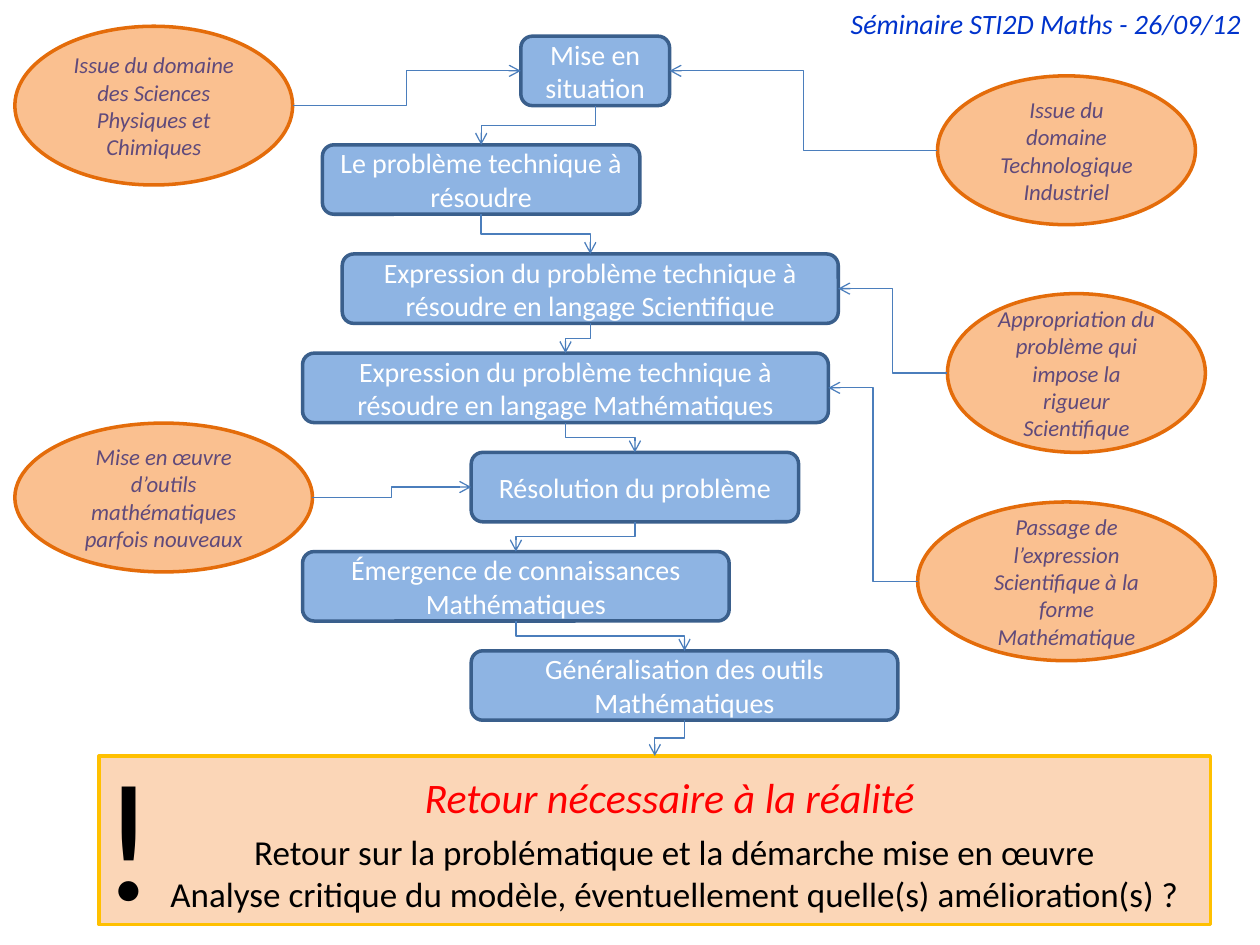
from lxml.etree import SubElement
from pptx import Presentation
from pptx.dml.color import RGBColor
from pptx.enum.shapes import MSO_CONNECTOR, MSO_SHAPE
from pptx.enum.text import MSO_ANCHOR, PP_ALIGN
from pptx.oxml.ns import qn
from pptx.util import Cm, Pt

WHITE = RGBColor(0xFF, 0xFF, 0xFF)
BLACK = RGBColor(0x00, 0x00, 0x00)
RED = RGBColor(0xFF, 0x00, 0x00)
HEADER_BLUE = RGBColor(0x00, 0x33, 0xCC)
STEP_FILL = RGBColor(0x8E, 0xB4, 0xE3)
STEP_LINE = RGBColor(0x3A, 0x5F, 0x8C)
NOTE_FILL = RGBColor(0xFA, 0xC0, 0x90)
NOTE_LINE = RGBColor(0xE4, 0x6C, 0x0A)
NOTE_TEXT = RGBColor(0x60, 0x4A, 0x7B)
FRAME_FILL = RGBColor(0xF7, 0x96, 0x46)
FRAME_LINE = RGBColor(0xFF, 0xC0, 0x00)
ARROW_BLUE = RGBColor(0x4B, 0x7E, 0xBC)

deck = Presentation()
deck.slide_width, deck.slide_height = Cm(25.4), Cm(19.05)
page = deck.slides.add_slide(deck.slide_layouts[6])


def write(box, text, size, color, italic=False, align=PP_ALIGN.CENTER):
    box.text_frame.word_wrap = True
    box.text_frame.text = text
    for para in box.text_frame.paragraphs:
        para.alignment = align
        for span in para.runs:
            span.font.name = "Calibri"
            span.font.size = Pt(size)
            span.font.italic = italic
            span.font.color.rgb = color


def add_box(kind, bounds, fill, line):
    box = page.shapes.add_shape(kind, *[Cm(value) for value in bounds])
    box.shadow.inherit = False
    box.fill.solid()
    box.fill.fore_color.rgb = fill
    box.line.color.rgb = line
    box.line.width = Pt(2)
    box.text_frame.vertical_anchor = MSO_ANCHOR.MIDDLE
    return box


# Header
header = page.shapes.add_textbox(Cm(16.9), Cm(0), Cm(8.5), Cm(0.94))
write(header, "Séminaire STI2D Maths - 26/09/12", 16, HEADER_BLUE, True, PP_ALIGN.LEFT)

# Chain of steps: left, top, width, text
steps = []
for left, top, width, text in [
    (10.5, 0.73, 3, "Mise en situation"),
    (6.5, 2.92, 6.4, "Le problème technique à résoudre"),
    (6.9, 5.12, 10, "Expression du problème technique à résoudre en langage Scientifique"),
    (6.1, 7.12, 10.6, "Expression du problème technique à résoudre en langage Mathématiques"),
    (9.5, 9.12, 6.6, "Résolution du problème"),
    (6.1, 11.12, 8.6, "Émergence de connaissances Mathématiques"),
    (9.5, 13.12, 8.6, "Généralisation des outils Mathématiques"),
]:
    step = add_box(MSO_SHAPE.ROUNDED_RECTANGLE, (left, top, width, 1.4), STEP_FILL, STEP_LINE)
    write(step, text, 16, WHITE)
    steps.append(step)

# Closing frame
frame = add_box(MSO_SHAPE.RECTANGLE, (2, 15.24, 22.4, 3.4), FRAME_FILL, FRAME_LINE)
frame_color = frame._element.spPr.find(qn("a:solidFill"))[0]
SubElement(frame_color, qn("a:alpha")).set("val", "39000")
closing = ("Retour sur la problématique et la démarche mise en œuvre\n"
           "Analyse critique du modèle, éventuellement quelle(s) amélioration(s) ?")
for bounds, text, size, color, italic, align in [
    ((7, 15.42, 13, 1.28), "Retour nécessaire à la réalité", 24, RED, True, PP_ALIGN.CENTER),
    ((3, 16.61, 21.2, 1.96), closing, 20, BLACK, False, PP_ALIGN.CENTER),
    ((1.8, 14.65, 2, 4.37), "!", 96, BLACK, False, PP_ALIGN.LEFT),
]:
    box = page.shapes.add_textbox(*[Cm(value) for value in bounds])
    write(box, text, size, color, italic, align)

# Comments in ellipses, each with an elbow arrow to its step
arrows = []
for bounds, target, text in [
    ((0.3, 0.53, 5.6, 3.2), 0, "Issue du domaine des Sciences Physiques et Chimiques"),
    ((18.9, 1.53, 5.2, 3), 0, "Issue du domaine Technologique Industriel"),
    ((19.1, 5.92, 5.2, 3.2), 2, "Appropriation du problème qui impose la rigueur Scientifique"),
    ((18.5, 10.12, 6, 3.2), 3, "Passage de l’expression Scientifique à la forme Mathématique"),
    ((0.3, 8.53, 6, 3), 4, "Mise en œuvre d’outils mathématiques parfois nouveaux"),
]:
    note = add_box(MSO_SHAPE.OVAL, bounds, NOTE_FILL, NOTE_LINE)
    write(note, text, 13, NOTE_TEXT, True)
    step = steps[target]
    from_left = note.left < step.left
    start_x = note.left + note.width if from_left else note.left
    middle = note.top + note.height // 2
    arrow = page.shapes.add_connector(MSO_CONNECTOR.ELBOW, start_x, middle, step.left, step.top)
    arrow.end_connect(step, 1 if from_left else 3)
    arrows.append(arrow)

# Elbow arrows down the chain: a quarter turn makes them leave vertically
for upper, lower in zip(steps, steps[1:] + [frame]):
    arrow = page.shapes.add_connector(MSO_CONNECTOR.ELBOW, 0, 0, 0, 0)
    arrow.begin_connect(upper, 2)
    arrow.end_connect(lower, 0)
    goes_right = arrow.end_x > arrow.begin_x
    center_x = (arrow.begin_x + arrow.end_x) // 2
    center_y = (arrow.begin_y + arrow.end_y) // 2
    across, down = arrow.width, arrow.height
    arrow.left, arrow.top = center_x - down // 2, center_y - across // 2
    arrow.width, arrow.height = down, across
    turn = arrow._element.spPr.find(qn("a:xfrm"))
    turn.set("rot", "16200000" if goes_right else "5400000")
    turn.set("flipH", "1" if goes_right else "0")
    turn.set("flipV", "0")
    arrows.append(arrow)

# Arrow style
for arrow in arrows:
    arrow.line.color.rgb = ARROW_BLUE
    arrow.line.width = Pt(0.75)
    SubElement(arrow.line._get_or_add_ln(), qn("a:tailEnd")).set("type", "arrow")
    SubElement(arrow._element.spPr, qn("a:effectLst"))

deck.save("out.pptx")
